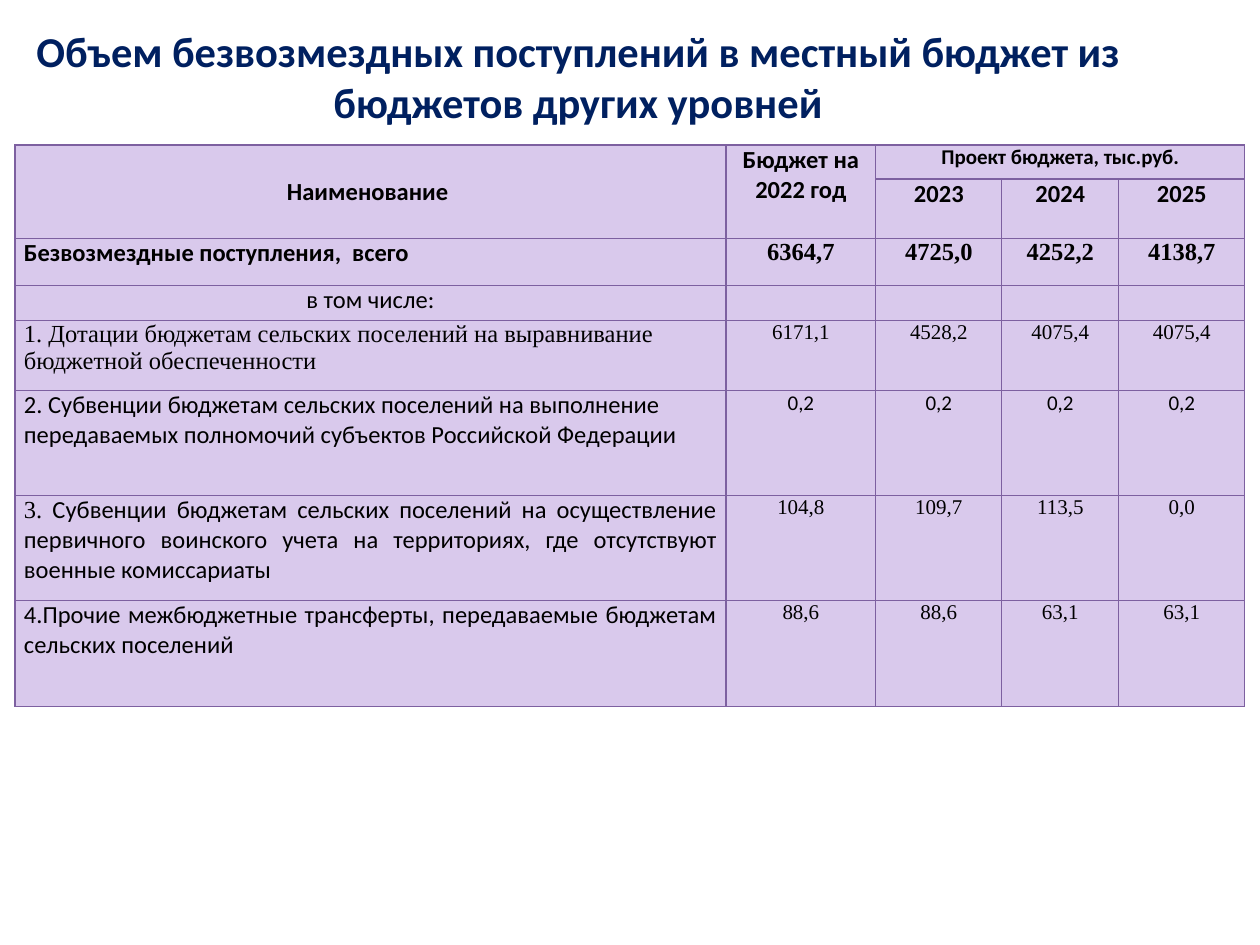
from lxml.etree import SubElement
from pptx import Presentation
from pptx.dml.color import RGBColor
from pptx.enum.text import MSO_ANCHOR as Anchor, PP_ALIGN as Align
from pptx.oxml import parse_xml
from pptx.oxml.ns import nsdecls, qn
from pptx.util import Pt

PX = 914400 // 126
COLORS = {"title": "002060", "text": "000000", "cell": "D9C9EC", "border": "7D60A0"}
SANS, SERIF = "Calibri", "Times New Roman"

COLUMNS = [711, 150, 126, 117, 126]
ROWS = [34, 35, 47, 35, 70, 105, 105, 106]
YEARS = ["2023", "2024", "2025"]
# label parts (text, font), alignment, values, font of the values
ITEMS = [
    ([("1. Дотации бюджетам сельских поселений на выравнивание бюджетной обеспеченности", SERIF)],
     Align.LEFT, ["6171,1", "4528,2", "4075,4", "4075,4"], SERIF),
    ([("2. Субвенции бюджетам сельских поселений на выполнение передаваемых полномочий "
       "субъектов Российской Федерации", SANS)],
     Align.LEFT, ["0,2"] * 4, SANS),
    ([("3.", SERIF), (" Субвенции бюджетам сельских поселений на осуществление первичного "
                      "воинского учета на территориях, где отсутствуют военные комиссариаты", SANS)],
     Align.JUSTIFY, ["104,8", "109,7", "113,5", "0,0"], SERIF),
    ([("4.Прочие межбюджетные трансферты, передаваемые бюджетам сельских поселений", SANS)],
     Align.JUSTIFY, ["88,6", "88,6", "63,1", "63,1"], SERIF),
]


class BudgetSlide:
    """Holds the style and the current slide."""

    def __init__(self, presentation):
        self.slide = presentation.slides.add_slide(presentation.slide_layouts[5])

    def format_run(self, run, size, font, bold, color="text"):
        run.font.size, run.font.name, run.font.bold = Pt(size), font, bold
        run.font.color.rgb = RGBColor.from_string(COLORS[color])

    def title(self, text, left, top, width, height):
        heading = self.slide.shapes.title
        heading.left, heading.top = left * PX, top * PX
        heading.width, heading.height = width * PX, height * PX
        frame = heading.text_frame
        frame.text = text
        frame.word_wrap = True
        frame.vertical_anchor = Anchor.TOP
        frame.margin_top = 0
        frame.paragraphs[0].alignment = Align.CENTER
        self.format_run(frame.paragraphs[0].runs[0], 24.3, SANS, True, "title")

    def table(self, left, top, columns, rows):
        frame = self.slide.shapes.add_table(len(rows), len(columns), left * PX, top * PX,
                                            sum(columns) * PX, sum(rows) * PX)
        table = frame.table
        for column, width in zip(table.columns, columns):
            column.width = width * PX
        for row, height in zip(table.rows, rows):
            row.height = height * PX
        for cell in table.iter_cells():
            self.style_cell(cell)
        return table

    def style_cell(self, cell):
        cell.margin_left = cell.margin_right = 9 * PX
        cell.margin_top = cell.margin_bottom = 0
        cell.fill.solid()
        cell.fill.fore_color.rgb = RGBColor.from_string(COLORS["cell"])
        for index, side in enumerate("LRTB"):
            cell._tc.tcPr.insert(index, parse_xml(
                f'<a:ln{side} {nsdecls("a")} w="{Pt(0.75)}"><a:solidFill>'
                f'<a:srgbClr val="{COLORS["border"]}"/></a:solidFill></a:ln{side}>'))
        # keeps empty cells from stretching their row
        SubElement(cell.text_frame.paragraphs[0]._p, qn("a:endParaRPr"), sz="1200")

    def cell_text(self, cell, parts, size=14, bold=False, align=Align.CENTER):
        paragraph = cell.text_frame.paragraphs[0]
        paragraph.alignment = align
        for text, font in parts:
            run = paragraph.add_run()
            run.text = text
            self.format_run(run, size, font, bold)


def main():
    presentation = Presentation()
    presentation.slide_width, presentation.slide_height = 1260 * PX, 945 * PX
    page = BudgetSlide(presentation)
    page.title("Объем безвозмездных поступлений в местный бюджет из бюджетов других уровней",
               11, 25, 1134, 127)

    budget = page.table(15, 145, COLUMNS, ROWS)
    for first, last in [((0, 0), (1, 0)), ((0, 1), (1, 1)), ((0, 2), (0, 4))]:
        budget.cell(*first).merge(budget.cell(*last))

    page.cell_text(budget.cell(0, 0), [("Наименование ", SANS)], bold=True)
    budget.cell(0, 0).vertical_anchor = Anchor.MIDDLE
    page.cell_text(budget.cell(0, 1), [("Бюджет на 2022 год", SANS)], bold=True)
    page.cell_text(budget.cell(0, 2), [("Проект бюджета, тыс.руб.", SANS)], 12, True)
    for column, year in enumerate(YEARS, 2):
        page.cell_text(budget.cell(1, column), [(year, SANS)], bold=True)

    page.cell_text(budget.cell(2, 0), [("Безвозмездные поступления,  всего", SANS)],
                   bold=True, align=Align.LEFT)
    for column, total in enumerate(["6364,7", "4725,0", "4252,2", "4138,7"], 1):
        page.cell_text(budget.cell(2, column), [(total, SERIF)], bold=True)
    page.cell_text(budget.cell(3, 0), [("в том числе:", SANS)])

    for row, (label, align, values, font) in enumerate(ITEMS, 4):
        page.cell_text(budget.cell(row, 0), label, align=align)
        for column, value in enumerate(values, 1):
            page.cell_text(budget.cell(row, column), [(value, font)], 12)

    presentation.save("out.pptx")


if __name__ == "__main__":
    main()
